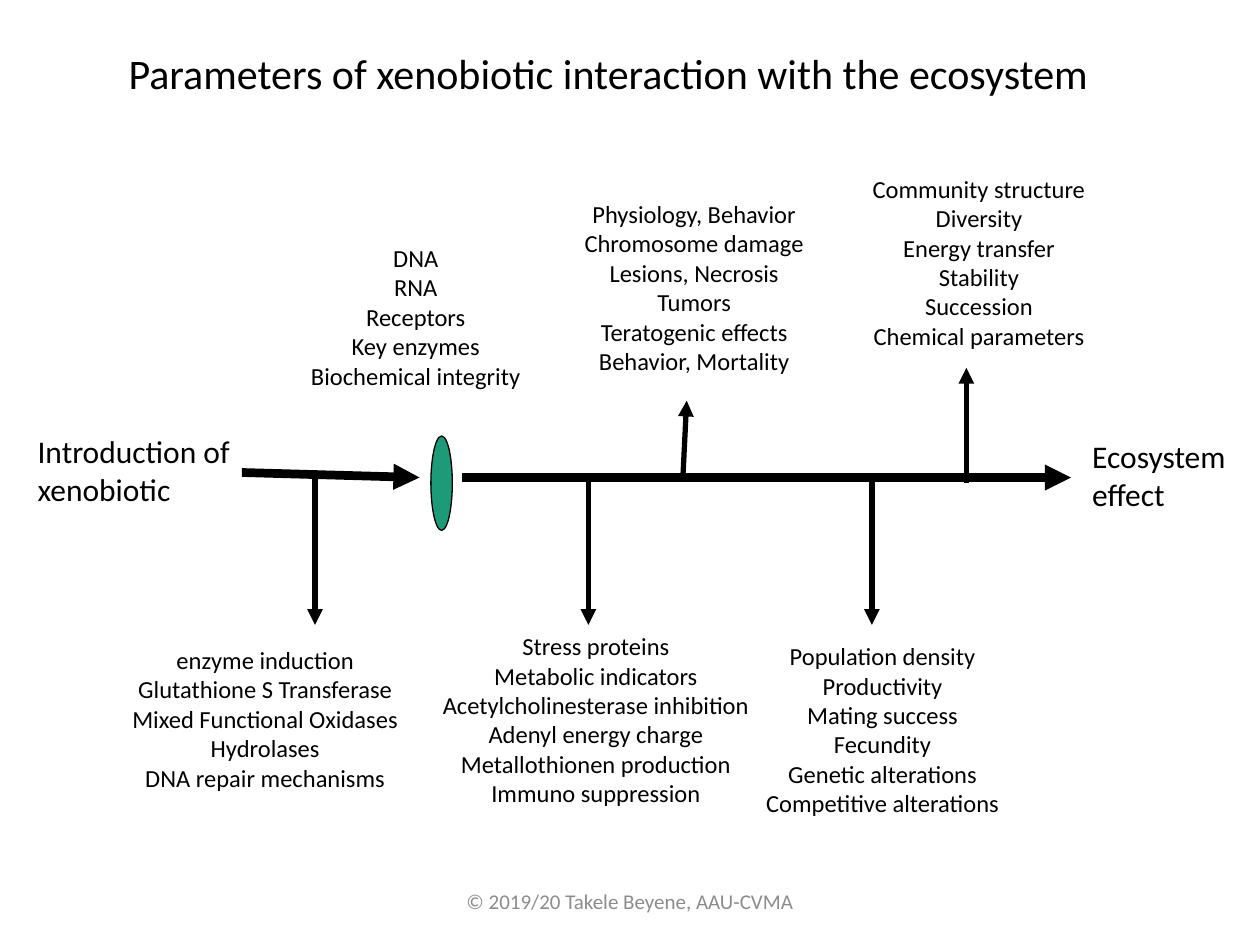
from dataclasses import dataclass

from lxml import etree
from pptx import Presentation
from pptx.dml.color import RGBColor
from pptx.enum.shapes import MSO_CONNECTOR, MSO_SHAPE
from pptx.enum.text import MSO_ANCHOR, MSO_AUTO_SIZE, PP_ALIGN
from pptx.oxml.ns import qn
from pptx.util import Inches, Pt

STRAIGHT = MSO_CONNECTOR.STRAIGHT
OVAL = MSO_SHAPE.OVAL
TOP, MIDDLE = MSO_ANCHOR.TOP, MSO_ANCHOR.MIDDLE
LEFT, CENTER = PP_ALIGN.LEFT, PP_ALIGN.CENTER
NO_AUTOFIT = MSO_AUTO_SIZE.NONE
TITLE_ONLY = 5


@dataclass(frozen=True)
class Theme:
    """Colours, font and type sizes of the slide."""
    ink: RGBColor = RGBColor(0, 0, 0)
    muted: RGBColor = RGBColor(0x8C, 0x8C, 0x8C)
    barrier: RGBColor = RGBColor(0x1D, 0x9A, 0x78)
    font: str = "Calibri"
    title: int = 24
    endpoint: int = 18
    effects: int = 14
    footer: int = 12
    axis: int = 5
    branch: int = 3
    outline: float = 0.75


THEME = Theme()
AXIS_Y = 3.79
BRANCH_END_Y = 4.96

EFFECTS = [
    ((2.17, 1.88, 2.26, 1.28),
     ["DNA", "RNA", "Receptors", "Key enzymes", "Biochemical integrity"]),
    ((4.38, 1.53, 2.26, 1.51),
     ["Physiology, Behavior", "Chromosome damage", "Lesions, Necrosis",
      "Tumors", "Teratogenic effects", "Behavior, Mortality"]),
    ((6.75, 1.33, 2.04, 1.5),
     ["Community structure", "Diversity", "Energy transfer",
      "Stability", "Succession", "Chemical parameters"]),
    ((0.84, 5.07, 2.53, 1.26),
     ["enzyme induction", "Glutathione S Transferase",
      "Mixed Functional Oxidases", "Hydrolases", "DNA repair mechanisms"]),
    ((3.33, 4.96, 2.8, 1.73),
     ["Stress proteins", "Metabolic indicators",
      "Acetylcholinesterase inhibition", "Adenyl energy charge",
      "Metallothionen production", "Immuno suppression"]),
    ((5.92, 5.04, 2.17, 1.73),
     ["Population density", "Productivity", "Mating success",
      "Fecundity", "Genetic alterations", "Competitive alterations"]),
]

AXIS_ARROWS = [((1.92, 3.75), (3.33, AXIS_Y)), ((3.67, AXIS_Y), (8.5, AXIS_Y))]
DOWN_BRANCHES = [((x, AXIS_Y), (x, BRANCH_END_Y)) for x in (2.5, 4.67, 6.92)]
UP_BRANCHES = [((5.42, AXIS_Y), (5.45, 3.18)), ((7.67, 3.83), (7.67, 2.92))]


def write_lines(frame, lines, size, align=LEFT, anchor=TOP, color=THEME.ink):
    """Fill a text frame with one paragraph per line."""
    frame.text = "\n".join(lines)
    layout = {"word_wrap": True, "auto_size": NO_AUTOFIT, "vertical_anchor": anchor}
    for key, value in layout.items():
        setattr(frame, key, value)
    for paragraph in frame.paragraphs:
        paragraph.alignment = align
        for key, value in {"name": THEME.font, "size": Pt(size)}.items():
            setattr(paragraph.font, key, value)
        paragraph.font.color.rgb = color


def add_title(slide, box, wording):
    """Move the title placeholder into the box and write it."""
    title = slide.shapes.title
    for key, value in zip(("left", "top", "width", "height"), box):
        setattr(title, key, Inches(value))
    write_lines(title.text_frame, [wording], THEME.title)


def add_label(slide, box, lines, size, **formats):
    """Add a text box holding the lines."""
    label = slide.shapes.add_textbox(*map(Inches, box))
    write_lines(label.text_frame, lines, size, **formats)


def add_arrow(slide, start, end, width):
    """Add an arrow pointing at its end."""
    arrow = slide.shapes.add_connector(STRAIGHT, *map(Inches, start + end))
    arrow.line.color.rgb = THEME.ink
    arrow.line.width = Pt(width)
    head = etree.SubElement(arrow.line._get_or_add_ln(), qn("a:tailEnd"))
    head.set("type", "triangle")
    etree.SubElement(arrow._element.spPr, qn("a:effectLst"))


def add_barrier(slide, box):
    """Add the oval that the xenobiotic crosses."""
    barrier = slide.shapes.add_shape(OVAL, *map(Inches, box))
    barrier.shadow.inherit = False
    barrier.fill.solid()
    barrier.fill.fore_color.rgb = THEME.barrier
    barrier.line.color.rgb = THEME.ink
    barrier.line.width = Pt(THEME.outline)


def add_pathway(slide):
    """Add the main axis with its endpoints, barrier and branches."""
    add_label(slide, (0.2, 3.38, 1.82, 1.01),
              ["Introduction of", "xenobiotic"], THEME.endpoint)
    add_label(slide, (8.57, 3.42, 1.42, 0.7),
              ["Ecosystem", "effect"], THEME.endpoint)
    for start, end in AXIS_ARROWS:
        add_arrow(slide, start, end, THEME.axis)
    add_barrier(slide, (3.42, 3.46, 0.17, 0.75))
    for start, end in DOWN_BRANCHES + UP_BRANCHES:
        add_arrow(slide, start, end, THEME.branch)


def main():
    """Build and save the slide."""
    deck = Presentation()
    deck.slide_width, deck.slide_height = Inches(10), Inches(7.5)
    slide = deck.slides.add_slide(deck.slide_layouts[TITLE_ONLY])
    add_title(slide, (0.92, 0.33, 8.45, 0.5),
              "Parameters of xenobiotic interaction with the ecosystem")
    add_pathway(slide)
    for box, lines in EFFECTS:
        add_label(slide, box, lines, THEME.effects, align=CENTER)
    add_label(slide, (3.31, 6.95, 3.38, 0.4),
              ["© 2019/20 Takele Beyene, AAU-CVMA"], THEME.footer,
              align=CENTER, anchor=MIDDLE, color=THEME.muted)
    deck.save("out.pptx")


if __name__ == "__main__":
    main()
